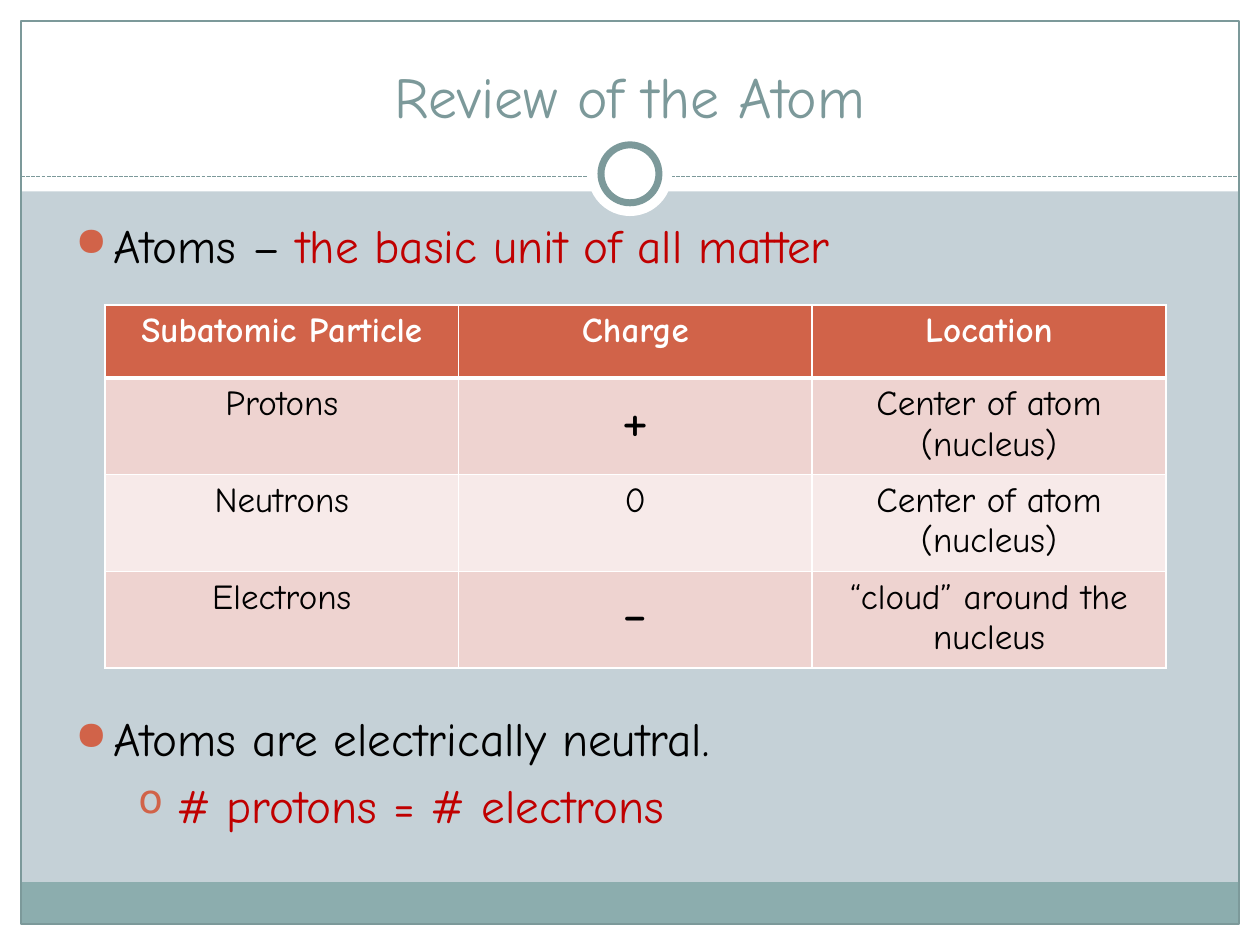
from dataclasses import dataclass

from lxml.etree import SubElement
from pptx import Presentation
from pptx.dml.color import RGBColor
from pptx.enum.dml import MSO_LINE
from pptx.enum.shapes import MSO_CONNECTOR, MSO_SHAPE
from pptx.enum.text import MSO_ANCHOR, PP_ALIGN
from pptx.oxml import parse_xml
from pptx.oxml.ns import nsdecls, qn
from pptx.util import Inches, Pt


@dataclass(frozen=True)
class Theme:
    font: str = "Comic Neue"
    background: str = "C5D1D7"
    white: str = "FFFFFF"
    black: str = "000000"
    teal: str = "7C999A"
    footer: str = "8CADAE"
    accent: str = "D16349"
    answer: str = "C00000"
    bands: tuple = ("EED3D0", "F7EAE9")
    title: int = 33
    body: int = 27
    cell: int = 20
    symbol: int = 36


THEME = Theme()
WIDTH, HEIGHT = 10, 7.5
MARGIN = WIDTH / 60


def color(value):
    return RGBColor.from_string(value)


def add_span(para, text, size, ink, bold=False):
    span = para.add_run()
    span.text = text
    font = span.font
    font.name, font.size, font.bold = THEME.font, Pt(size), bold
    font.color.rgb = color(ink)


def add_panel(page, box, fill=None, line=None, weight=0.75, kind=MSO_SHAPE.RECTANGLE):
    panel = page.shapes.add_shape(kind, *map(Inches, box))
    panel.shadow.inherit = False
    if fill:
        panel.fill.solid()
        panel.fill.fore_color.rgb = color(fill)
    else:
        panel.fill.background()
    if line:
        panel.line.color.rgb = color(line)
        panel.line.width = Pt(weight)
    else:
        panel.line.fill.background()


def add_frame(page, box, header_height):
    left, top, width, height = box
    right, bottom = left + width, top + height
    inner = (left + MARGIN, top + MARGIN, width - 2 * MARGIN, height - 2 * MARGIN)
    footer_height = 2 * MARGIN
    for edge in (
        (left, bottom - MARGIN, width, MARGIN),
        (left, top, width, header_height),
        (left, top, MARGIN, height),
        (right - MARGIN, top, MARGIN, height),
    ):
        add_panel(page, edge, THEME.white)
    add_panel(page, (inner[0], bottom - MARGIN - footer_height, inner[2], footer_height), THEME.footer)
    add_panel(page, inner, line=THEME.teal)

    rule_y = Inches(top + 1.4)
    rule = page.shapes.add_connector(
        MSO_CONNECTOR.STRAIGHT, Inches(left + MARGIN), rule_y, Inches(right - MARGIN), rule_y
    )
    rule.line.color.rgb = color(THEME.teal)
    rule.line.width = Pt(0.75)
    rule.line.dash_style = MSO_LINE.SQUARE_DOT
    SubElement(rule._element.spPr, qn("a:effectLst"))

    center_x, center_y = left + width / 2, top + 1.38
    for size, line in ((0.67, None), (0.46, THEME.teal)):
        ring = (center_x - size / 2, center_y - size / 2, size, size)
        add_panel(page, ring, THEME.white, line, 4, MSO_SHAPE.OVAL)


def add_title(page, box, text):
    title = page.shapes.title
    title.left, title.top, title.width, title.height = map(Inches, box)
    page.shapes._spTree.append(title._element)
    frame = title.text_frame
    frame.word_wrap = True
    frame.vertical_anchor = MSO_ANCHOR.BOTTOM
    para = frame.paragraphs[0]
    para.alignment = PP_ALIGN.CENTER
    add_span(para, text, THEME.title, THEME.teal)


def add_bullets(page, box, items):
    frame = page.shapes.add_textbox(*map(Inches, box)).text_frame
    frame.word_wrap = True
    for index, (level, spans) in enumerate(items):
        para = frame.add_paragraph() if index else frame.paragraphs[0]
        para.level = level
        para.space_before = Pt(0.2 * THEME.body)
        props = para._p.get_or_add_pPr()
        props.set("marL", str(Inches(0.3 + 0.5 * level)))
        props.set("indent", str(Inches(-0.3)))
        bullet_color = SubElement(props, qn("a:buClr"))
        SubElement(bullet_color, qn("a:srgbClr"), val=THEME.accent)
        SubElement(props, qn("a:buSzPct"), val="85000")
        SubElement(props, qn("a:buChar"), char="●o"[level])
        for text, ink in spans:
            add_span(para, text, THEME.body, ink)


def set_borders(cell, header_edge):
    weights = {"L": 1, "R": 1, "T": 3 if header_edge == "T" else 1, "B": 3 if header_edge == "B" else 1}
    props = cell._tc.get_or_add_tcPr()
    for index, (side, weight) in enumerate(weights.items()):
        props.insert(index, parse_xml(
            f'<a:ln{side} {nsdecls("a")} w="{Pt(weight)}"><a:solidFill>'
            f'<a:srgbClr val="{THEME.white}"/></a:solidFill></a:ln{side}>'
        ))


def add_particle_table(page, box, rows, row_heights):
    table = page.shapes.add_table(len(rows), len(rows[0]), *map(Inches, box)).table
    for column in table.columns:
        column.width = Inches(box[2] / len(rows[0]))
    for r, (texts, height) in enumerate(zip(rows, row_heights)):
        table.rows[r].height = Inches(height)
        header = r == 0
        for c, text in enumerate(texts):
            cell = table.cell(r, c)
            cell.fill.solid()
            cell.fill.fore_color.rgb = color(THEME.accent if header else THEME.bands[(r - 1) % 2])
            set_borders(cell, {0: "B", 1: "T"}.get(r))
            para = cell.text_frame.paragraphs[0]
            para.alignment = PP_ALIGN.CENTER
            size = THEME.symbol if text in ("+", "-") else THEME.cell
            add_span(para, text, size, THEME.white if header else THEME.black, header)


def main():
    deck = Presentation()
    deck.slide_width, deck.slide_height = Inches(WIDTH), Inches(HEIGHT)
    page = deck.slides.add_slide(deck.slide_layouts[5])
    page.background.fill.solid()
    page.background.fill.fore_color.rgb = color(THEME.background)

    add_frame(page, (0, 0, WIDTH, HEIGHT), 1.52)
    add_title(page, (2 * MARGIN, 0.25, WIDTH - 4 * MARGIN, 5 * MARGIN), "Review of the Atom")

    body_left, body_width, body_height = 3 * MARGIN, WIDTH - 6 * MARGIN, 7 * MARGIN
    add_bullets(page, (body_left, 10 * MARGIN, body_width, body_height), [
        (0, [("Atoms – ", THEME.black), ("the basic unit of all matter", THEME.answer)]),
    ])
    row_heights = [0.58] + [0.74] * 3
    add_particle_table(page, (5 * MARGIN, 2.42, 8.42, sum(row_heights)), [
        ("Subatomic Particle", "Charge", "Location"),
        ("Protons", "+", "Center of atom (nucleus)"),
        ("Neutrons", "0", "Center of atom (nucleus)"),
        ("Electrons", "-", "“cloud” around the nucleus"),
    ], row_heights)
    add_bullets(page, (body_left, 33.5 * MARGIN, body_width, body_height), [
        (0, [("Atoms are electrically neutral.", THEME.black)]),
        (1, [("# protons = # electrons", THEME.answer)]),
    ])
    deck.save("out.pptx")


if __name__ == "__main__":
    main()
